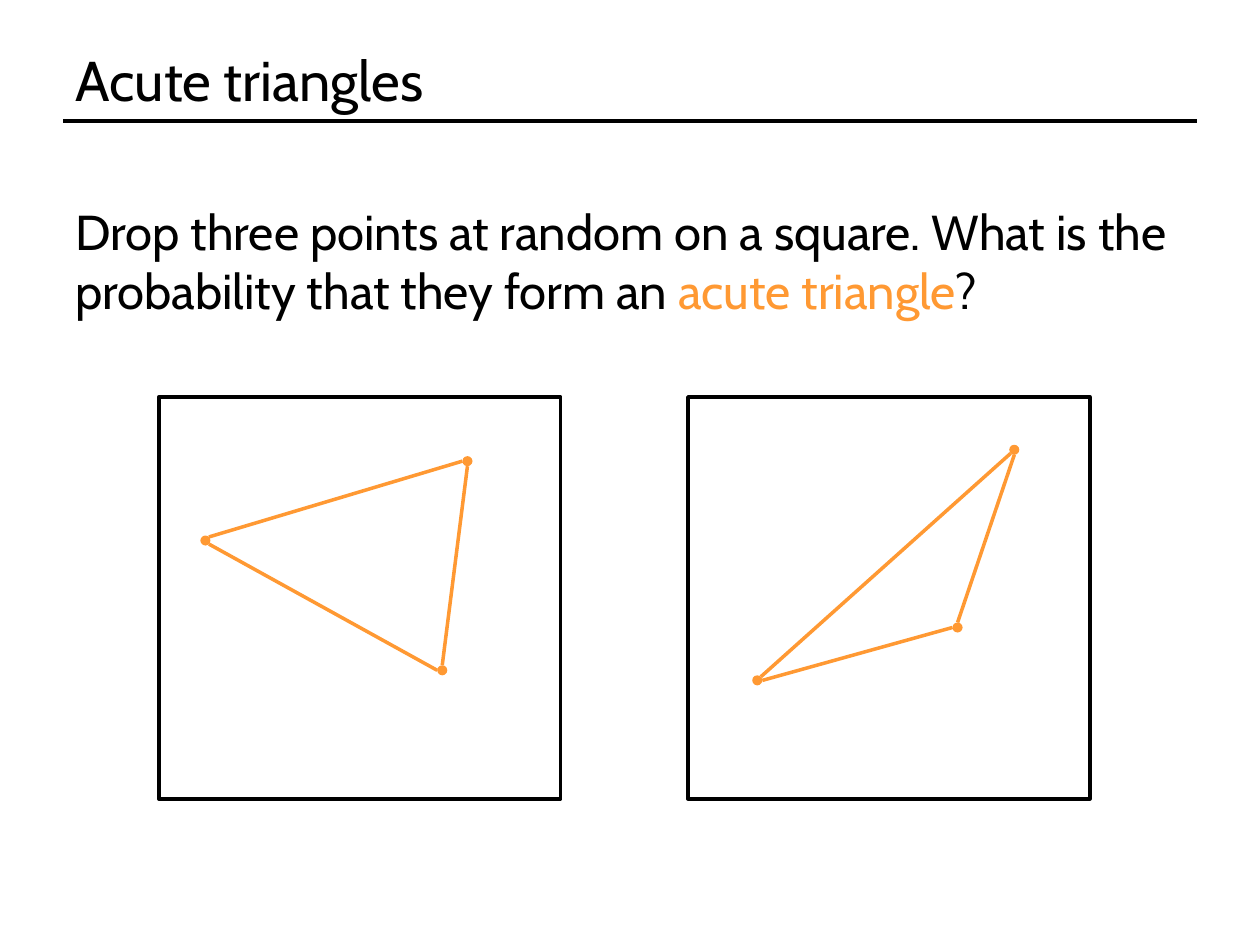
from pptx import Presentation
from pptx.dml.color import RGBColor
from pptx.enum.shapes import MSO_CONNECTOR, MSO_SHAPE
from pptx.enum.text import MSO_ANCHOR
from pptx.oxml.ns import qn
from pptx.util import Inches, Pt
from lxml import etree

LINE = MSO_CONNECTOR.STRAIGHT
RECT, OVAL = MSO_SHAPE.RECTANGLE, MSO_SHAPE.OVAL
TOP, MIDDLE = MSO_ANCHOR.TOP, MSO_ANCHOR.MIDDLE
FONT, BLACK, ORANGE = "Cabin", "000000", "FF9933"
DOT, SIDE = 0.08, 3.19
# Where an edge meets a dot, in dot radii from its centre
SITES = {"top": (0, -1), "bottom": (0, 1), "left": (-1, 0), "right": (1, 0),
         "tr": (0.71, -0.71), "br": (0.71, 0.71), "bl": (-0.71, 0.71)}


def color(code):
    return RGBColor.from_string(code)


def add_line(slide, start, end, code):
    line = slide.shapes.add_connector(
        LINE, *(Inches(v) for v in (*start, *end)))
    line.line.color.rgb = color(code)
    line.line.width = Pt(2)
    etree.SubElement(line._element.spPr, qn("a:effectLst"))


def add_shape(slide, kind, box, fill=None, edge=None):
    shape = slide.shapes.add_shape(kind, *(Inches(v) for v in box))
    shape.shadow.inherit = False
    if fill:
        shape.fill.solid()
        shape.fill.fore_color.rgb = color(fill)
    else:
        shape.fill.background()
    if edge:
        shape.line.color.rgb = color(edge)
        shape.line.width = Pt(2)
    else:
        shape.line.fill.background()


def add_text(slide, box, runs, size, anchor):
    frame = slide.shapes.add_textbox(*(Inches(v) for v in box)).text_frame
    frame.word_wrap = True
    frame.vertical_anchor = anchor
    para = frame.paragraphs[0]
    para.font.name, para.font.size = FONT, Pt(size)
    for text, code in runs:
        run = para.add_run()
        run.text = text
        run.font.color.rgb = color(code)


def add_title(slide, box, text):
    left, top, width, height = box
    add_text(slide, box, [(text, BLACK)], 32, MIDDLE)
    base = top + height
    add_line(slide, (left, base), (left + width, base), BLACK)


def add_panel(slide, left, top, dots, edges):
    """Square with three dots, joined by edges of (dot, site) pairs."""
    add_shape(slide, RECT, (left, top, SIDE, SIDE), edge=BLACK)
    half = DOT / 2
    for x, y in dots:
        add_shape(slide, OVAL,
                  (left + x - half, top + y - half, DOT, DOT), fill=ORANGE)

    def meet(dot, site):
        (x, y), (dx, dy) = dots[dot], SITES[site]
        return left + x + dx * half, top + y + dy * half

    for start, end in edges:
        add_line(slide, meet(*start), meet(*end), ORANGE)


def main():
    deck = Presentation()
    deck.slide_width, deck.slide_height = Inches(10), Inches(7.5)
    slide = deck.slides.add_slide(deck.slide_layouts[6])

    # Heading and question
    add_title(slide, (0.5, 0.3, 9, 0.66), "Acute triangles")
    add_text(slide, (0.5, 1.55, 9.03, 1.04), [
        ("Drop three points at random on a square. What is the "
         "probability that they form an ", BLACK),
        ("acute triangle", ORANGE), ("?", BLACK)], 28, TOP)

    # Acute triangle
    add_panel(slide, 1.26, 3.15, [(2.25, 2.17), (0.37, 1.14), (2.45, 0.51)], [
        ((1, "br"), (0, "left")),
        ((2, "bottom"), (0, "top")),
        ((1, "tr"), (2, "left"))])

    # Obtuse triangle
    add_panel(slide, 5.46, 3.15, [(2.14, 1.83), (0.55, 2.25), (2.59, 0.42)], [
        ((1, "tr"), (2, "bl")),
        ((2, "bottom"), (0, "top")),
        ((1, "right"), (0, "left"))])

    deck.save("out.pptx")


if __name__ == "__main__":
    main()
